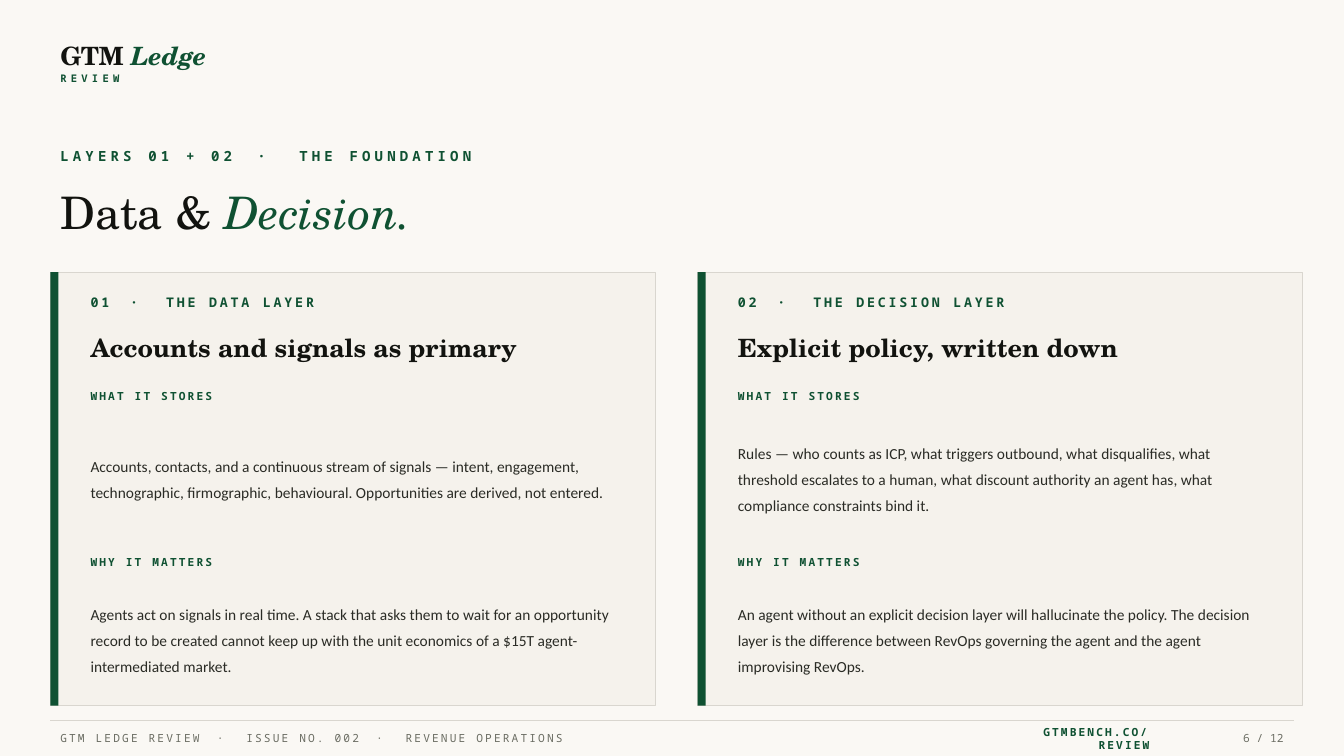
from lxml.etree import SubElement
from pptx import Presentation
from pptx.dml.color import RGBColor
from pptx.enum.shapes import MSO_CONNECTOR, MSO_SHAPE
from pptx.enum.text import MSO_ANCHOR, PP_ALIGN
from pptx.oxml.ns import qn
from pptx.util import Inches, Pt

PAPER = RGBColor(0xFA, 0xF8, 0xF4)
CARD = RGBColor(0xF5, 0xF2, 0xEC)
RULE = RGBColor(0xD9, 0xD6, 0xCF)
GREEN = RGBColor(0x0F, 0x51, 0x32)
INK = RGBColor(0x12, 0x13, 0x0F)
BODY = RGBColor(0x2A, 0x2B, 0x25)
GREY = RGBColor(0x6B, 0x6D, 0x63)
SERIF, MONO, SANS = "TeX Gyre Schola", "Noto Sans Mono", "Calibri"
SEPARATOR = " · "
MONO_ADVANCE = 0.6

LAYERS = [
    ("01 · THE DATA LAYER", "Accounts and signals as primary",
     "Accounts, contacts, and a continuous stream of signals — intent, engagement, "
     "technographic, firmographic, behavioural. Opportunities are derived, not entered.",
     "Agents act on signals in real time. A stack that asks them to wait for an opportunity "
     "record to be created cannot keep up with the unit economics of a $15T "
     "agent-intermediated market."),
    ("02 · THE DECISION LAYER", "Explicit policy, written down",
     "Rules — who counts as ICP, what triggers outbound, what disqualifies, what threshold "
     "escalates to a human, what discount authority an agent has, what compliance "
     "constraints bind it.",
     "An agent without an explicit decision layer will hallucinate the policy. The decision "
     "layer is the difference between RevOps governing the agent and the agent "
     "improvising RevOps."),
]


def add_run(paragraph, text, color, tracking=0, **font_format):
    """Add one run with its font values and letter spacing in points."""
    run = paragraph.add_run()
    run.text = text
    run.font.color.rgb = color
    for name, value in font_format.items():
        setattr(run.font, name, value)
    if tracking:
        run._r.get_or_add_rPr().set("spc", str(round(tracking * 100)))


def add_paragraph(slide, left, top, width, height, **paragraph_format):
    """Place a wrapping, middle-anchored text box and return its paragraph."""
    frame = slide.shapes.add_textbox(
        Inches(left), Inches(top), Inches(width), Inches(height)).text_frame
    frame.word_wrap = True
    frame.vertical_anchor = MSO_ANCHOR.MIDDLE
    for name, value in paragraph_format.items():
        setattr(frame.paragraphs[0], name, value)
    return frame.paragraphs[0]


def add_label(slide, box, text, size, tracking=0, color=GREEN, bold=True, align=None):
    """Write a monospaced label whose separators are tracked wider."""
    paragraph = add_paragraph(slide, *box, alignment=align)
    font = dict(name=MONO, size=Pt(size), bold=bold)
    wide = tracking + (MONO_ADVANCE * size + tracking) * 2 / 3
    for index, part in enumerate(text.split(SEPARATOR)):
        if index:
            add_run(paragraph, SEPARATOR, color, wide, **font)
        add_run(paragraph, part, color, tracking, **font)


def add_two_tone(slide, box, plain, accent, size, bold=False):
    """Write a serif line that ends in green italics."""
    paragraph = add_paragraph(slide, *box)
    font = dict(name=SERIF, size=Pt(size), bold=bold)
    add_run(paragraph, plain, INK, **font)
    add_run(paragraph, accent, GREEN, italic=True, **font)


def add_rectangle(slide, left, top, width, height, fill, line=None):
    """Draw a flat rectangle with an optional hairline border."""
    rectangle = slide.shapes.add_shape(
        MSO_SHAPE.RECTANGLE, Inches(left), Inches(top), Inches(width), Inches(height))
    rectangle.shadow.inherit = False
    rectangle.fill.solid()
    rectangle.fill.fore_color.rgb = fill
    if line is None:
        rectangle.line.fill.background()
    else:
        rectangle.line.color.rgb = line
        rectangle.line.width = Pt(0.5)


def add_header(slide, left, top):
    """Place the masthead, the section label and the title."""
    add_two_tone(slide, (left, top, 3, 0.4), "GTM ", "Ledge", 18, bold=True)
    add_label(slide, (left, top + 0.33, 2, 0.2), "REVIEW", 7.5, 3)
    add_label(slide, (left, top + 1.05, 12, 0.3),
              "LAYERS 01 + 02 · THE FOUNDATION", 10, 3)
    add_two_tone(slide, (left, top + 1.4, 12.3, 0.7), "Data & ", "Decision.", 32)


def add_layer_card(slide, left, top, width, height, layer):
    """Place one layer card with its heading and two sections."""
    label, heading, stores, matters = layer
    add_rectangle(slide, left, top, width, height, CARD, RULE)
    add_rectangle(slide, left, top, 0.08, height, GREEN)
    inner_left, inner_width = left + 0.3, width - 0.5
    add_label(slide, (inner_left, top + 0.15, inner_width, 0.3), label, 9.5, 2)
    title = add_paragraph(slide, inner_left, top + 0.5, inner_width, 0.5)
    add_run(title, heading, INK, name=SERIF, size=Pt(18), bold=True)
    sections = [("WHAT IT STORES", stores, 1.1, 1.3),
                ("WHY IT MATTERS", matters, 2.75, 1.2)]
    for caption, text, offset, text_height in sections:
        caption_top = top + offset
        add_label(slide, (inner_left, caption_top, inner_width, 0.25), caption, 8, 1.5)
        body = add_paragraph(slide, inner_left, caption_top + 0.27, inner_width,
                             text_height, line_spacing=1.4)
        add_run(body, text, BODY, name=SANS, size=Pt(11))


def add_footer(slide, left, top, width):
    """Place the footer rule, the issue line, the address and the page number."""
    right = left + width
    rule = slide.shapes.add_connector(
        MSO_CONNECTOR.STRAIGHT, Inches(left), Inches(top), Inches(right), Inches(top))
    rule.line.color.rgb = RULE
    rule.line.width = Pt(0.75)
    SubElement(rule._element.spPr, qn("a:effectLst"))
    text_top = top + 0.05
    add_label(slide, (left, text_top, 8, 0.25),
              "GTM LEDGE REVIEW · ISSUE NO. 002 · REVENUE OPERATIONS",
              8, 1.5, GREY, bold=False)
    add_label(slide, (right - 1.33, text_top, 1.33, 0.25), "6 / 12", 8,
              color=GREY, bold=False, align=PP_ALIGN.RIGHT)
    add_label(slide, (right - 2.83, text_top, 1.5, 0.25), "GTMBENCH.CO/REVIEW",
              8, 1.5, align=PP_ALIGN.RIGHT)


def main():
    """Build the slide and save it."""
    presentation = Presentation()
    presentation.slide_width = Inches(13.33)
    presentation.slide_height = Inches(7.5)
    slide = presentation.slides.add_slide(presentation.slide_layouts[6])
    slide.background.fill.solid()
    slide.background.fill.fore_color.rgb = PAPER
    add_header(slide, 0.5, 0.35)
    for index, layer in enumerate(LAYERS):
        add_layer_card(slide, 0.5 + index * 6.42, 2.7, 6, 4.3, layer)
    add_footer(slide, 0.5, 7.15, 12.33)
    presentation.save("out.pptx")


if __name__ == "__main__":
    main()
